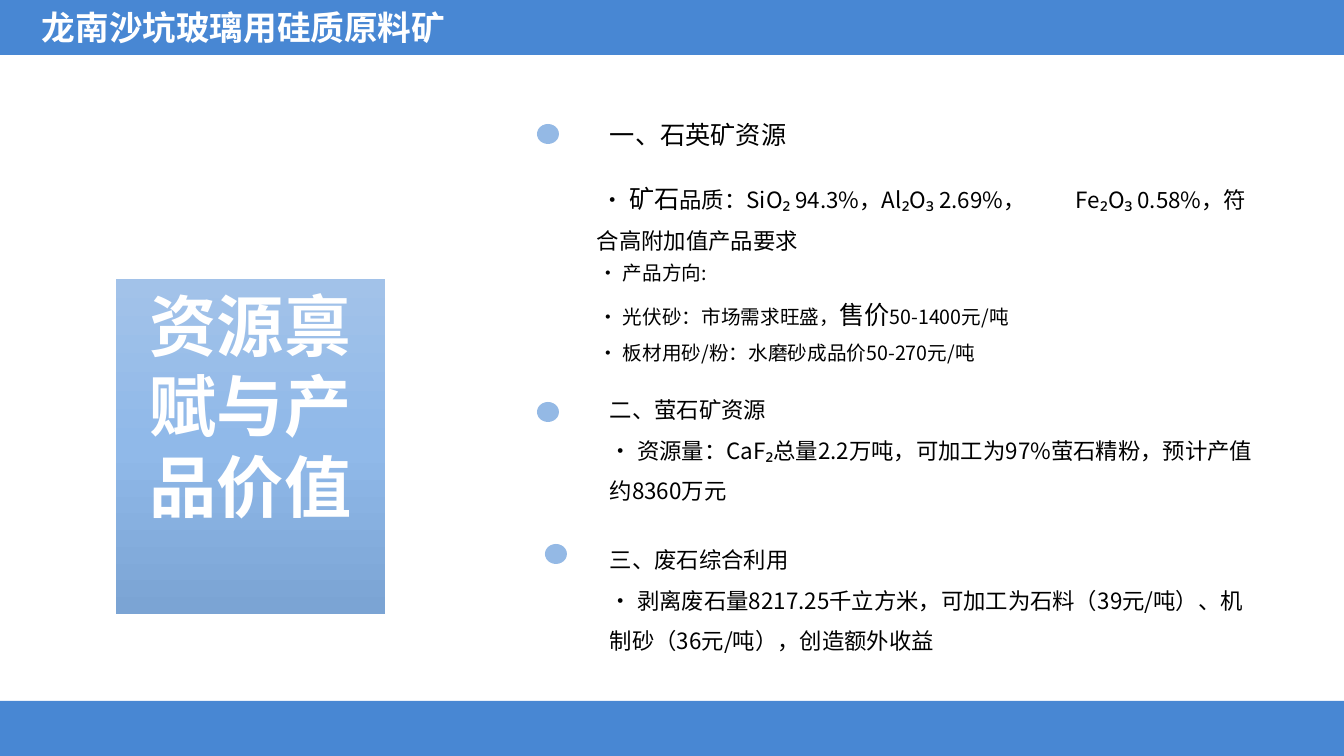
from copy import deepcopy

from lxml.etree import SubElement
from pptx import Presentation
from pptx.dml.color import RGBColor
from pptx.enum.shapes import MSO_SHAPE
from pptx.enum.text import MSO_ANCHOR, PP_ALIGN
from pptx.oxml.ns import qn
from pptx.util import Emu, Pt

EMU_PER_PX = 12192000 / 1344
SLIDE_WIDTH, SLIDE_HEIGHT = 1344, 756
FONT = "Noto Sans CJK SC"
COLORS = {
    "bar": "4887D3",
    "dot": "94B9E5",
    "panel_top": "A2C2E9",
    "panel_middle": "90B9E9",
    "panel_bottom": "7BA4D4",
    "text": "000000",
    "light": "FFFFFF",
}


def px(value):
    return Emu(round(value * EMU_PER_PX))


def rgb(name):
    return RGBColor.from_string(COLORS[name])


def add_plain_shape(slide, kind, box, color):
    shape = slide.shapes.add_shape(kind, *map(px, box))
    shape.shadow.inherit = False
    shape.line.fill.background()
    shape.fill.solid()
    shape.fill.fore_color.rgb = rgb(color)
    return shape


def write_text(paragraph, text, size=16, color="text", bold=False, font=FONT):
    run = paragraph.add_run()
    run.text = text
    run.font.size = Pt(size)
    run.font.bold = bold
    run.font.name = font
    run.font.color.rgb = rgb(color)
    SubElement(run.font._element, qn("a:ea"), typeface=FONT)


def add_text_box(slide, box, paragraphs, wrap=True, line_spacing=1.5, **style):
    """Each paragraph is a list of (text, size) pairs."""
    frame = slide.shapes.add_textbox(*map(px, box)).text_frame
    frame.word_wrap = wrap
    for index, pieces in enumerate(paragraphs):
        paragraph = frame.add_paragraph() if index else frame.paragraphs[0]
        paragraph.line_spacing = line_spacing
        for text, size in pieces:
            write_text(paragraph, text, size=size, **style)
    return frame


def set_tab_stop(paragraph, position):
    tabs = SubElement(paragraph._p.get_or_add_pPr(), qn("a:tabLst"))
    SubElement(tabs, qn("a:tab"), pos=str(px(position)), algn="l")


def fill_gradient(shape, colors):
    """Spread the colours evenly from top to bottom."""
    shape.fill.gradient()
    shape.fill.gradient_angle = 270
    stop_list = shape._element.spPr.find(qn("a:gradFill")).find(qn("a:gsLst"))
    stop_list.append(deepcopy(stop_list[-1]))
    stops = shape.fill.gradient_stops
    for index, (stop, color) in enumerate(zip(stops, colors)):
        stop.position = index / (len(colors) - 1)
        stop.color.rgb = rgb(color)


def add_panel(slide):
    panel = add_plain_shape(slide, MSO_SHAPE.RECTANGLE, (116, 279, 269, 335), "bar")
    fill_gradient(panel, ("panel_top", "panel_middle", "panel_bottom"))
    frame = panel.text_frame
    frame.word_wrap = True
    frame.vertical_anchor = MSO_ANCHOR.TOP
    paragraph = frame.paragraphs[0]
    paragraph.alignment = PP_ALIGN.CENTER
    write_text(paragraph, "资源禀赋与产品价值", size=48, color="light", bold=True)


def add_quartz_section(slide):
    add_text_box(slide, (600, 99, 591, 66), [[("一、石英矿资源", 18)]])
    quality = add_text_box(slide, (587, 163, 691, 271), [[
        (" • ", 16), ("矿石", 18),
        ("品质：SiO₂ 94.3%，Al₂O₃ 2.69%，\tFe₂O₃ 0.58%，符合高附加值产品要求", 16),
    ]])
    set_tab_stop(quality.paragraphs[0], 479)
    add_text_box(slide, (589, 244, 608, 148), [
        [("• 产品方向:", 14)],
        [("• 光伏砂：市场需求旺盛，", 14), ("售价", 18), ("50-1400元/吨", 14)],
        [("• 板材用砂/粉：水磨砂成品价50-270元/吨", 14)],
    ])


def main():
    presentation = Presentation()
    presentation.slide_width = px(SLIDE_WIDTH)
    presentation.slide_height = px(SLIDE_HEIGHT)
    slide = presentation.slides.add_slide(presentation.slide_layouts[6])

    # Header and footer bars
    bar_height = 55
    for top in (0, SLIDE_HEIGHT - bar_height):
        add_plain_shape(slide, MSO_SHAPE.RECTANGLE,
                        (0, top, SLIDE_WIDTH, bar_height), "bar")
    add_text_box(slide, (32, 2, 425, 50), [[("龙南沙坑玻璃用硅质原料矿", 24)]],
                 wrap=False, line_spacing=1.0, color="light", bold=True, font="Arial")

    # Topic panel on the left
    add_panel(slide)

    # Section markers
    for left, top in ((537, 124), (537, 402), (545, 544)):
        add_plain_shape(slide, MSO_SHAPE.OVAL, (left, top, 22, 20), "dot")

    # Sections on the right
    add_quartz_section(slide)
    add_text_box(slide, (600, 378, 684, 164), [
        [("二、萤石矿资源", 16)],
        [("• 资源量：CaF₂总量2.2万吨，可加工为97%萤石精粉，预计产值约8360万元", 16)],
    ])
    add_text_box(slide, (600, 528, 659, 144), [
        [("三、废石综合利用", 16)],
        [("• 剥离废石量8217.25千立方米，可加工为石料（39元/吨）、"
          "机制砂（36元/吨），创造额外收益", 16)],
    ])

    presentation.save("out.pptx")


if __name__ == "__main__":
    main()
